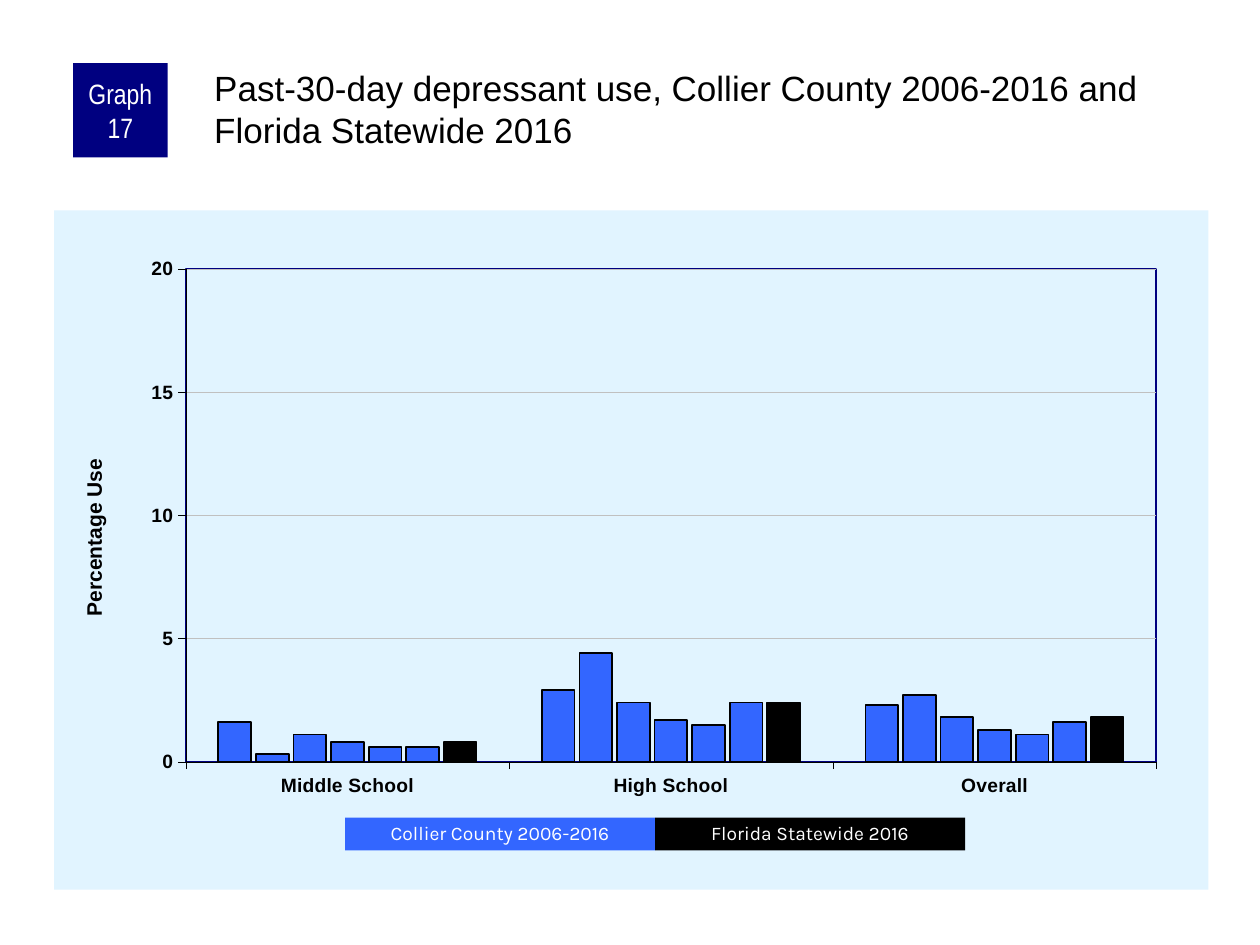
from lxml.etree import SubElement
from pptx import Presentation
from pptx.chart.data import CategoryChartData
from pptx.dml.color import RGBColor
from pptx.enum.chart import XL_CHART_TYPE, XL_TICK_MARK
from pptx.enum.shapes import MSO_SHAPE
from pptx.enum.text import MSO_ANCHOR, PP_ALIGN
from pptx.oxml import parse_xml
from pptx.oxml.ns import nsdecls, qn
from pptx.util import Inches, Pt

COLORS = {
    "black": "000000",
    "white": "FFFFFF",
    "navy": "000080",
    "county": "3366FF",
    "panel": "E1F4FF",
    "grid": "C0C0C0",
}
SCHOOL_LEVELS = ["Middle School", "High School", "Overall"]
USE_BY_SERIES = [
    (1.6, 2.9, 2.3),
    (0.3, 4.4, 2.7),
    (1.1, 2.4, 1.8),
    (0.8, 1.7, 1.3),
    (0.6, 1.5, 1.1),
    (0.6, 2.4, 1.6),
    (0.8, 2.4, 1.8),
]


def rgb(name):
    return RGBColor.from_string(COLORS[name])


def style_font(font, size, color="black", name="Arial", bold=False):
    font.size, font.name, font.bold = Pt(size), name, bold
    font.color.rgb = rgb(color)


def style_line(line, color, width):
    line.color.rgb = rgb(color)
    line.width = Pt(width)


def write_text(shape, text, align=PP_ALIGN.LEFT, anchor=MSO_ANCHOR.TOP,
               insets=(0.1, 0.05, 0.1, 0.05), spacing=None, **font):
    frame = shape.text_frame
    frame.word_wrap = True
    frame.vertical_anchor = anchor
    (frame.margin_left, frame.margin_top,
     frame.margin_right, frame.margin_bottom) = map(Inches, insets)
    paragraph = frame.paragraphs[0]
    paragraph.alignment = align
    paragraph.line_spacing = spacing
    run = paragraph.add_run()
    run.text = text
    style_font(run.font, **font)


def set_layout(parent, x, y, w=None, h=None, inner=False):
    """Place a chart part by fractions of the chart area."""
    layout = parent.find(qn("c:layout"))
    if layout is None:
        layout = parse_xml(f"<c:layout {nsdecls('c')}/>")
        text = parent.find(qn("c:tx"))
        parent.insert(0 if text is None else parent.index(text) + 1, layout)
    manual = SubElement(layout, qn("c:manualLayout"))
    settings = [("layoutTarget", "inner" if inner else None),
                ("xMode", "edge"), ("yMode", "edge"),
                ("x", x), ("y", y), ("w", w), ("h", h)]
    for tag, value in settings:
        if value is not None:
            SubElement(manual, qn(f"c:{tag}")).set("val", str(value))


def shape_properties(fill=None, line=None, width=1):
    """Build the c:spPr of a chart part that python-pptx does not expose."""
    def solid(name):
        return (f'<a:solidFill><a:srgbClr val="{COLORS[name]}"/></a:solidFill>'
                if name else "<a:noFill/>")
    return parse_xml(f'<c:spPr {nsdecls("c", "a")}>{solid(fill)}'
                     f'<a:ln w="{Pt(width)}">{solid(line)}</a:ln></c:spPr>')


class GraphSlide:
    def __init__(self, presentation):
        self.slide = presentation.slides.add_slide(presentation.slide_layouts[6])

    def label(self, text, box, fill, **text_format):
        shape = self.slide.shapes.add_shape(MSO_SHAPE.RECTANGLE, *map(Inches, box))
        shape.shadow.inherit = False
        shape.fill.solid()
        shape.fill.fore_color.rgb = rgb(fill)
        shape.line.fill.background()
        write_text(shape, text, align=PP_ALIGN.CENTER, anchor=MSO_ANCHOR.MIDDLE,
                   color="white", **text_format)

    def title(self, text, box, **text_format):
        heading = self.slide.shapes.add_textbox(*map(Inches, box))
        write_text(heading, text, **text_format)

    def column_chart(self, categories, rows, box):
        data = CategoryChartData()
        data.categories = categories
        for number, values in enumerate(rows, 1):
            data.add_series(f"Series {number}", values)
        chart = self.slide.shapes.add_chart(
            XL_CHART_TYPE.COLUMN_CLUSTERED, *map(Inches, box), data).chart
        chart.has_legend = chart.has_title = False
        style_font(chart.font, 8)

        columns = chart.plots[0]
        columns.gap_width, columns.overlap = 200, -15
        columns.vary_by_categories = False
        for series in columns.series:
            is_state = series.name == f"Series {len(rows)}"
            series.format.fill.solid()
            series.format.fill.fore_color.rgb = rgb("black" if is_state else "county")
            style_line(series.format.line, "black", 1)

        for axis in (chart.category_axis, chart.value_axis):
            axis.major_tick_mark = XL_TICK_MARK.OUTSIDE
            style_font(axis.tick_labels.font, 11, bold=True)
            style_line(axis.format.line, "black", 0.25)
        percent = chart.value_axis
        percent.minimum_scale, percent.maximum_scale, percent.major_unit = 0, 20, 5
        style_line(percent.major_gridlines.format.line, "grid", 0.25)
        caption = percent.axis_title.text_frame
        caption.text = "Percentage Use"
        style_font(caption.paragraphs[0].runs[0].font, 12, bold=True)
        body = percent.axis_title._element.find(".//" + qn("a:bodyPr"))
        body.set("rot", "-5400000")
        body.set("vert", "horz")
        set_layout(percent.axis_title._element, 0.02, 0.36)

        chart_space = chart._chartSpace
        plot_area = chart_space.chart.plotArea
        set_layout(plot_area, 0.114, 0.086, 0.841, 0.726, inner=True)
        plot_area.append(shape_properties(line="navy"))
        chart_space.chart.addnext(shape_properties(fill="panel"))


def main():
    presentation = Presentation()
    presentation.slide_width, presentation.slide_height = Inches(10), Inches(7.5)
    graph = GraphSlide(presentation)
    graph.column_chart(SCHOOL_LEVELS, USE_BY_SERIES, (0.43, 1.67, 9.16, 5.39))
    graph.label("Graph 17", (0.58, 0.5, 0.75, 0.75), "navy",
                insets=(0.05, 0, 0.05, 0), size=16, name="Arial Narrow")
    graph.title("Past-30-day depressant use, Collier County 2006-2016 and "
                "Florida Statewide 2016", (1.67, 0.5, 7.92, 0.83),
                insets=(0.03, 0.03, 0, 0), size=20)
    legend = [("Collier County 2006-2016", "county"),
              ("Florida Statewide 2016", "black")]
    key_width = 2.46
    for index, (text, fill) in enumerate(legend):
        graph.label(text, (2.74 + index * key_width, 6.49, key_width, 0.26), fill,
                    spacing=0.9, size=11, name="Karla")
    presentation.save("out.pptx")


if __name__ == "__main__":
    main()
